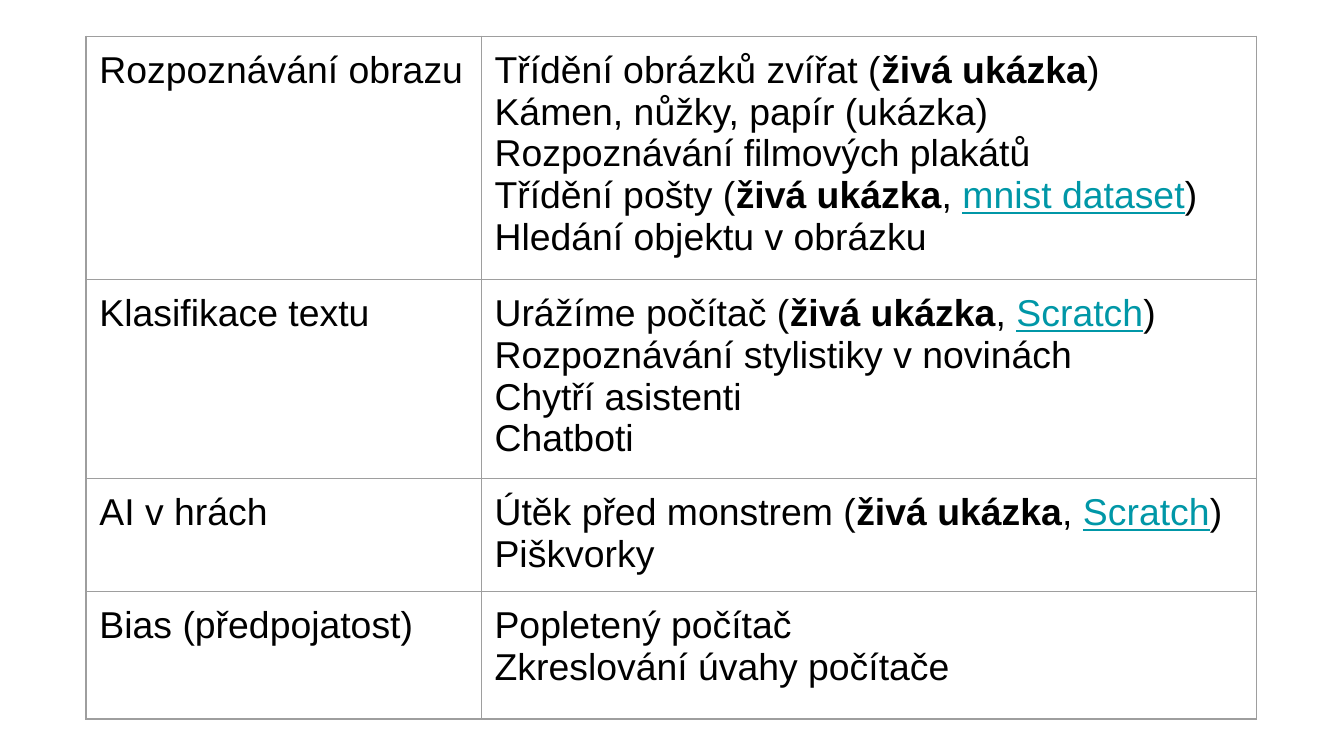
import pptx
import pptx.dml.color
import pptx.oxml
import pptx.oxml.ns
import pptx.util
from pptx.util import Inches

INK, LINK, BORDER = "000000", "0097A7", "9E9E9E"
PLAIN, BOLD, LINKED = "plain", "bold", "linked"
LIVE = ("živá ukázka", BOLD)

# (topic, paragraphs of activities); each paragraph is a list of (words, style)
TOPICS = [
    ("Rozpoznávání obrazu", [
        [("Třídění obrázků zvířat (", PLAIN), LIVE, (")", PLAIN)],
        [("Kámen, nůžky, papír (ukázka)", PLAIN)],
        [("Rozpoznávání filmových plakátů\nTřídění pošty (", PLAIN), LIVE,
         (", ", PLAIN), ("mnist dataset", LINKED), (")", PLAIN)],
        [("Hledání objektu v obrázku", PLAIN)],
    ]),
    ("Klasifikace textu", [
        [("Urážíme počítač (", PLAIN), LIVE, (", ", PLAIN), ("Scratch", LINKED),
         (")\nRozpoznávání stylistiky v novinách", PLAIN)],
        [("Chytří asistenti", PLAIN)],
        [("Chatboti", PLAIN)],
    ]),
    ("AI v hrách", [
        [("Útěk před monstrem (", PLAIN), LIVE, (", ", PLAIN),
         ("Scratch", LINKED), (")\nPiškvorky", PLAIN)],
    ]),
    ("Bias (předpojatost)", [
        [("Popletený počítač", PLAIN)],
        [("Zkreslování úvahy počítače", PLAIN)],
    ]),
]
SLIDE_WIDTH = 10
COLUMN_WIDTHS = [2.94, 5.77]
ROW_HEIGHTS = [1.81, 1.48, 0.84, 0.95]
LEFT, TOP, INSET = 0.64, 0.27, 0.1


def color(hex_value):
    return pptx.dml.color.RGBColor.from_string(hex_value)


def add_borders(cell):
    properties = cell._tc.get_or_add_tcPr()
    # Borders must precede the fill in a:tcPr
    for position, side in enumerate(("lnL", "lnR", "lnT", "lnB")):
        properties.insert(position, pptx.oxml.parse_xml(
            f'<a:{side} {pptx.oxml.ns.nsdecls("a")} w="{pptx.util.Pt(0.75)}">'
            f'<a:solidFill><a:srgbClr val="{BORDER}"/></a:solidFill></a:{side}>'))


def add_words(paragraph, words, style):
    for number, line in enumerate(words.split("\n")):
        if number:
            paragraph.add_line_break()
        run = paragraph.add_run()
        run.text = line
        run.font.name = "Arial"
        run.font.size = pptx.util.Pt(20)
        run.font.bold = style == BOLD
        run.font.underline = style == LINKED
        run.font.color.rgb = color(LINK if style == LINKED else INK)


def fill_cell(cell, paragraphs):
    cell.margin_left = cell.margin_right = Inches(INSET)
    cell.margin_top = cell.margin_bottom = Inches(INSET)
    cell.fill.background()
    add_borders(cell)
    frame = cell.text_frame
    for number, runs in enumerate(paragraphs):
        paragraph = frame.add_paragraph() if number else frame.paragraphs[0]
        for words, style in runs:
            add_words(paragraph, words, style)


deck = pptx.Presentation()
deck.slide_width = Inches(SLIDE_WIDTH)
deck.slide_height = Inches(SLIDE_WIDTH * 9 / 16)
slide = deck.slides.add_slide(deck.slide_layouts[6])
slide.background.fill.solid()
slide.background.fill.fore_color.rgb = color("FFFFFF")

table = slide.shapes.add_table(
    len(TOPICS), len(COLUMN_WIDTHS), Inches(LEFT), Inches(TOP),
    Inches(sum(COLUMN_WIDTHS)), Inches(sum(ROW_HEIGHTS))).table
table.first_row = table.horz_banding = False
for column, width in zip(table.columns, COLUMN_WIDTHS):
    column.width = Inches(width)
for row, height, (topic, activities) in zip(table.rows, ROW_HEIGHTS, TOPICS):
    row.height = Inches(height)
    fill_cell(row.cells[0], [[(topic, PLAIN)]])
    fill_cell(row.cells[1], activities)

deck.save("out.pptx")
